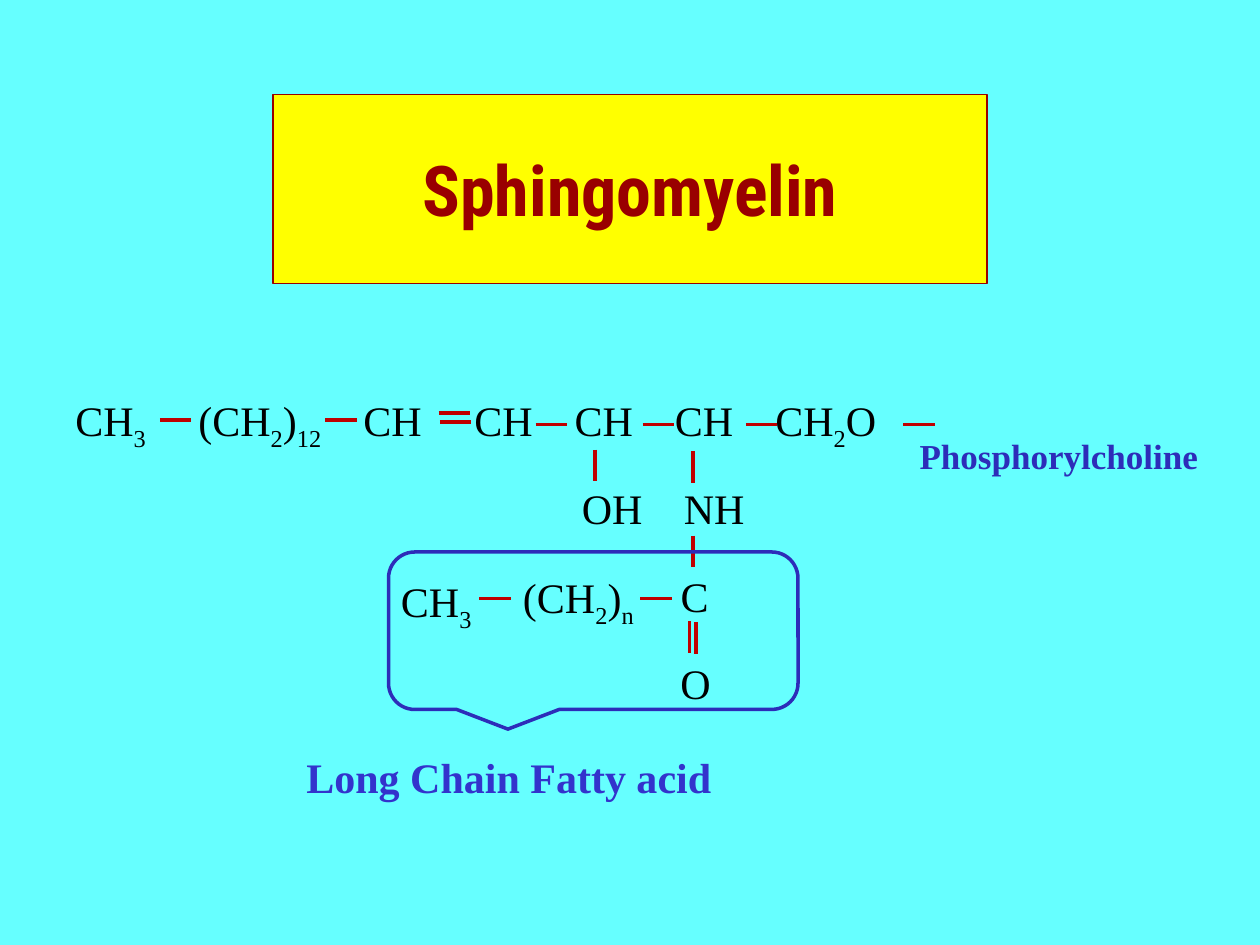
import dataclasses

import pptx
import pptx.dml.color
import pptx.enum.shapes
import pptx.enum.text
import pptx.oxml
import pptx.oxml.ns
import pptx.util

Pt = pptx.util.Pt
RGB = pptx.dml.color.RGBColor.from_string


@dataclasses.dataclass(frozen=True)
class Theme:
    background: str = "66FFFF"
    title_fill: str = "FFFF00"
    title_ink: str = "990000"
    ink: str = "000000"
    bond: str = "C00000"
    callout: str = "2D2DB9"
    acid_label: str = "3333CC"
    title_font: str = "Roboto Condensed"
    body_font: str = "Times New Roman"
    title_size: float = 40
    formula_size: float = 24
    label_size: float = 20
    bond_width: float = 2.25
    bond_length: float = 18


@dataclasses.dataclass(frozen=True)
class Box:
    left: float
    top: float
    width: float
    height: float

    def inner(self, left, top, width, height=36):
        return Box(self.left + left, self.top + top, width, height)

    def lengths(self):
        return Pt(self.left), Pt(self.top), Pt(self.width), Pt(self.height)


THEME = Theme()


def write_text(frame, text, *, size=THEME.formula_size, color=THEME.ink,
               font=THEME.body_font, bold=False, align=None, tabs=()):
    """Fill a frame; parts of the text between ~ marks become subscripts."""
    paragraph = frame.paragraphs[0]
    if tabs:
        tab_list = pptx.oxml.parse_xml(
            f"<a:tabLst {pptx.oxml.ns.nsdecls('a')}/>")
        for position in tabs:
            tab = tab_list.makeelement(pptx.oxml.ns.qn("a:tab"),
                                       {"pos": str(Pt(position)), "algn": "l"})
            tab_list.append(tab)
        paragraph._p.get_or_add_pPr().append(tab_list)
    if align is not None:
        paragraph.alignment = align
    for index, part in enumerate(text.split("~")):
        if not part:
            continue
        run = paragraph.add_run()
        run.text = part
        run.font.size = Pt(size)
        run.font.name = font
        run.font.bold = bold
        run.font.color.rgb = RGB(color)
        if index % 2:
            run._r.get_or_add_rPr().set("baseline", "-25000")


def add_text(slide, box, text, wrap=False, **text_format):
    frame = slide.shapes.add_textbox(*box.lengths()).text_frame
    frame.word_wrap = wrap
    frame.auto_size = pptx.enum.text.MSO_AUTO_SIZE.SHAPE_TO_FIT_TEXT
    write_text(frame, text, **text_format)


def add_bonds(slide, box, starts, vertical=False):
    """Draw one bond of standard length from each start point in the box."""
    across, down = (0, THEME.bond_length) if vertical else (THEME.bond_length, 0)
    for x, y in starts:
        left, top = box.left + x, box.top + y
        line = slide.shapes.add_connector(
            pptx.enum.shapes.MSO_CONNECTOR.STRAIGHT,
            Pt(left), Pt(top), Pt(left + across), Pt(top + down))
        line.line.color.rgb = RGB(THEME.bond)
        line.line.width = Pt(THEME.bond_width)
        properties = line._element.spPr
        properties.append(properties.makeelement(
            pptx.oxml.ns.qn("a:effectLst"), {}))


def place_title(slide, box):
    title = slide.shapes.title
    title.left, title.top, title.width, title.height = box.lengths()
    title.fill.solid()
    title.fill.fore_color.rgb = RGB(THEME.title_fill)
    title.line.color.rgb = RGB(THEME.title_ink)
    title.line.width = Pt(0.75)
    title.text_frame.vertical_anchor = pptx.enum.text.MSO_ANCHOR.MIDDLE
    write_text(title.text_frame, "Sphingomyelin", size=THEME.title_size,
               color=THEME.title_ink, font=THEME.title_font, bold=True,
               align=pptx.enum.text.PP_ALIGN.CENTER)


def place_backbone(slide, box):
    groups = ["CH~3~", "(CH~2~)~12~", "CH", "CH", "CH", "CH", "CH~2~O"]
    add_text(slide, box.inner(0, 0, 477.4), "\t".join(groups), wrap=True,
             tabs=(70.3, 164.6, 228, 285.3, 342.6, 400))
    add_bonds(slide, box, [(55.4, 18), (149.8, 18), (214.6, 14.2), (215.3, 19.2),
                           (270, 20.6), (331.2, 20.6), (390.2, 20.6),
                           (480.2, 20.6)])
    add_text(slide, box.inner(482.4, 23, 188, 31), "Phosphorylcholine", wrap=True,
             size=THEME.label_size, color=THEME.callout, bold=True)


def place_side_groups(slide, box):
    add_text(slide, box.inner(0, 15.2, 49), "OH")
    add_text(slide, box.inner(58.3, 15.2, 49), "NH")
    add_bonds(slide, box, [(14.4, 0), (70.6, 0.8), (70.6, 49)], vertical=True)


def place_fatty_acid(slide, box):
    add_text(slide, box.inner(0, 10, 62), "CH~3~")
    add_text(slide, box.inner(69.8, 7.9, 80), "(CH~2~)~n~")
    add_text(slide, box.inner(159.8, 7.2, 30.2), "C")
    add_text(slide, box.inner(159.8, 56.8, 31.7), "O")
    add_bonds(slide, box, [(51.8, 26.6), (144, 26.6)])
    add_bonds(slide, box, [(172, 39.6), (175.6, 40.3)], vertical=True)
    callout = slide.shapes.add_shape(
        pptx.enum.shapes.MSO_SHAPE.ROUNDED_RECTANGULAR_CALLOUT, *box.lengths())
    callout.shadow.inherit = False
    callout.fill.background()
    callout.line.color.rgb = RGB(THEME.callout)
    callout.line.width = Pt(2)
    add_text(slide, box.inner(-54, 110.8, 245.5), "Long Chain Fatty acid",
             color=THEME.acid_label, bold=True)


def main():
    presentation = pptx.Presentation()
    presentation.slide_width, presentation.slide_height = Pt(720), Pt(540)
    slide = presentation.slides.add_slide(presentation.slide_layouts[5])
    slide.background.fill.solid()
    slide.background.fill.fore_color.rgb = RGB(THEME.background)
    place_title(slide, Box(156, 54, 408, 108))
    place_backbone(slide, Box(36, 222, 670, 54))
    place_side_groups(slide, Box(325.4, 257, 108, 67))
    place_fatty_acid(slide, Box(222, 315.4, 234, 90))
    presentation.save("out.pptx")


if __name__ == "__main__":
    main()
